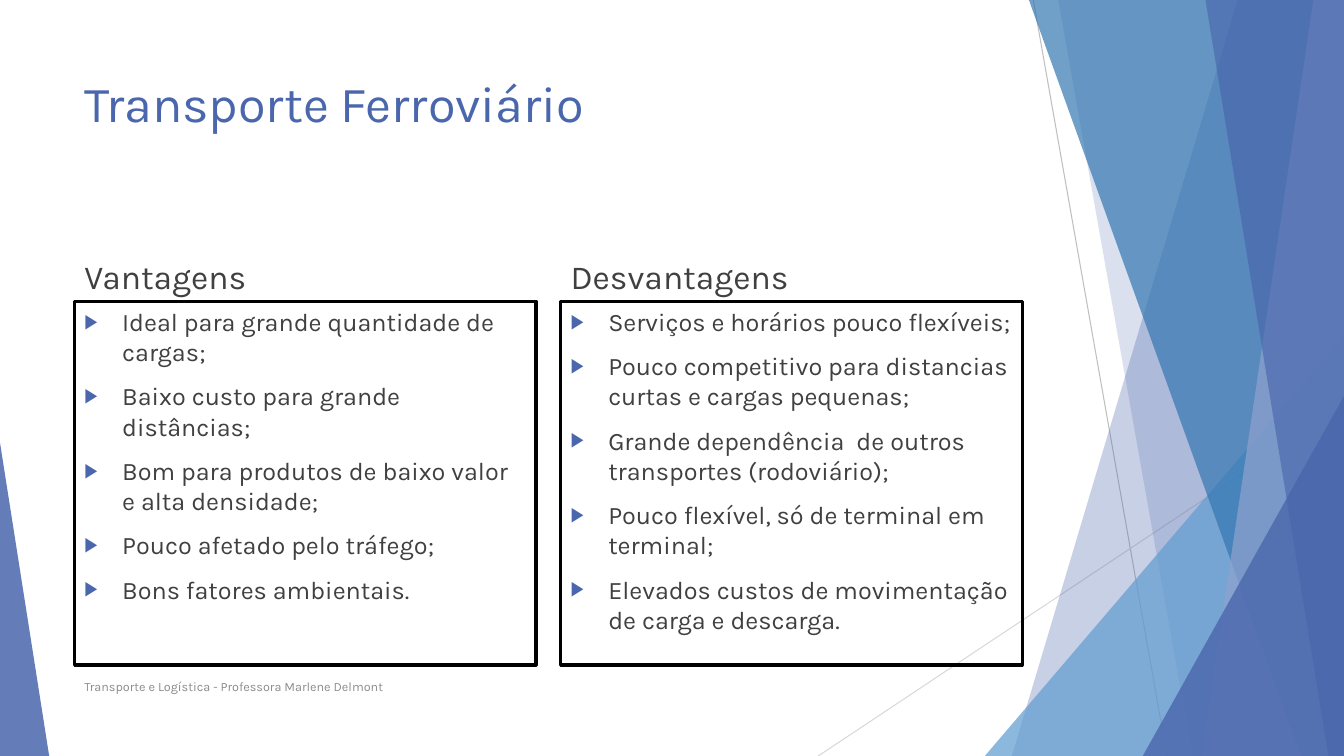
from dataclasses import dataclass

from lxml.etree import SubElement
from pptx import Presentation
from pptx.dml.color import RGBColor
from pptx.enum.shapes import MSO_CONNECTOR, MSO_SHAPE as Shape
from pptx.enum.text import MSO_ANCHOR as Anchor, MSO_AUTO_SIZE as AutoSize, PP_ALIGN as Align
from pptx.oxml.ns import qn
from pptx.util import Cm, Pt


@dataclass(frozen=True)
class Theme:
    font: str = "Karla"
    accent: str = "4A66AC"
    sky: str = "629DD1"
    steel: str = "3477B2"
    lavender: str = "90A2CF"
    text: str = "404040"
    muted: str = "8C8C8C"
    border: str = "000000"
    dark_rule: str = "BFBFBF"
    light_rule: str = "D9D9D9"
    title_size: int = 36
    heading_size: int = 24
    body_size: int = 18
    footer_size: int = 9


THEME = Theme()
SLIDE_W, SLIDE_H = 33.87, 19.05
MARGIN = 1.88
CONTENT_W = 23.88
COLUMN_W, COLUMN_GAP = 11.63, 0.62
HEADING_H, LIST_H = 1.6, 9.17
INDENT = 0.95

COLUMNS = {
    "Vantagens": [
        "Ideal para grande quantidade de cargas;",
        "Baixo custo para grande distâncias;",
        "Bom para produtos de baixo valor e alta densidade;",
        "Pouco afetado pelo tráfego;",
        "Bons fatores ambientais.",
    ],
    "Desvantagens": [
        "Serviços e horários pouco flexíveis;",
        "Pouco competitivo para distancias curtas e cargas pequenas;",
        "Grande dependência  de outros transportes (rodoviário);",
        "Pouco flexível, só de terminal em terminal;",
        "Elevados custos de movimentação de carga e descarga.",
    ],
}


def rgb(color):
    return RGBColor.from_string(color)


def paint(shape, color, opacity):
    """Fill a borderless, shadowless shape with a colour at an opacity in percent."""
    shape.shadow.inherit = False
    shape.line.fill.background()
    shape.fill.solid()
    shape.fill.fore_color.rgb = rgb(color)
    solid = shape.fill._xPr.find(qn("a:solidFill"))
    SubElement(solid[0], qn("a:alpha"), val=str(opacity * 1000))


def add_rule(slide, start, end, color):
    ends = [Cm(value) for value in (*start, *end)]
    rule = slide.shapes.add_connector(MSO_CONNECTOR.STRAIGHT, *ends)
    rule.line.color.rgb = rgb(color)
    rule.line.width = Pt(0.75)
    SubElement(rule._element.spPr, qn("a:effectLst"))


def add_band(slide, top_x, bottom_x, color, opacity):
    """Add a full-height band from a slanted left side to the slide's right edge."""
    outline = slide.shapes.build_freeform(Cm(top_x), 0)
    corners = [(SLIDE_W, 0), (SLIDE_W, SLIDE_H), (bottom_x, SLIDE_H)]
    outline.add_line_segments([(Cm(x), Cm(y)) for x, y in corners], close=True)
    paint(outline.convert_to_shape(), color, opacity)


def add_corner(slide, left, right, top, peak, color, opacity):
    """Add a triangle on the bottom edge, its peak at 0 (left) or 1 (right)."""
    corner = slide.shapes.add_shape(
        Shape.ISOSCELES_TRIANGLE, Cm(left), Cm(top), Cm(right - left), Cm(SLIDE_H - top))
    corner.adjustments[0] = peak
    paint(corner, color, opacity)


def add_decoration(slide):
    add_rule(slide, (26.04, 0), (29.41, SLIDE_H), THEME.dark_rule)
    add_rule(slide, (SLIDE_W, 10.24), (20.62, SLIDE_H), THEME.light_rule)
    add_band(slide, 31.19, 25.5, THEME.accent, 30)
    add_band(slide, 26.67, 30.05, THEME.accent, 20)
    add_corner(slide, 24.82, SLIDE_W, 8.46, 1, THEME.sky, 72)
    add_band(slide, 25.93, 32.79, THEME.steel, 70)
    add_band(slide, 33.1, 30.28, THEME.lavender, 70)
    add_band(slide, 30.38, 33.48, THEME.accent, 65)
    add_corner(slide, 28.8, SLIDE_W, 9.98, 1, THEME.accent, 80)
    add_corner(slide, 0, 1.24, 11.15, 0, THEME.accent, 85)


def write(shape, lines, size, color, anchor=Anchor.TOP, space_before=0):
    frame = shape.text_frame
    frame.text = "\n".join(lines)
    frame.word_wrap = True
    frame.auto_size = AutoSize.NONE
    frame.vertical_anchor = anchor
    for paragraph in frame.paragraphs:
        paragraph.alignment = Align.LEFT
        paragraph.space_before = Pt(space_before)
        for run in paragraph.runs:
            run.font.name = THEME.font
            run.font.size = Pt(size)
            run.font.color.rgb = rgb(color)


def add_bullet(paragraph):
    properties = paragraph._p.get_or_add_pPr()
    properties.set("marL", str(Cm(INDENT)))
    properties.set("indent", str(-Cm(INDENT)))
    bullet_color = SubElement(properties, qn("a:buClr"))
    SubElement(bullet_color, qn("a:srgbClr"), val=THEME.accent)
    SubElement(properties, qn("a:buSzPct"), val="80000")
    SubElement(properties, qn("a:buFont"), typeface="Arial")
    SubElement(properties, qn("a:buChar"), char="▶")


def set_title(slide, text, left, top, width, height):
    title = slide.shapes.title
    title.left, title.top, title.width, title.height = map(Cm, (left, top, width, height))
    write(title, [text], THEME.title_size, THEME.accent)


def add_column(slide, heading_text, items, left, top, width):
    """Place a heading and, right below it, its bordered bullet list."""
    heading = slide.shapes.add_textbox(Cm(left), Cm(top), Cm(width), Cm(HEADING_H))
    write(heading, [heading_text], THEME.heading_size, THEME.text, Anchor.BOTTOM, 10)

    points = slide.shapes.add_shape(
        Shape.RECTANGLE, Cm(left), Cm(top + HEADING_H), Cm(width), Cm(LIST_H))
    points.shadow.inherit = False
    points.fill.background()
    points.line.color.rgb = rgb(THEME.border)
    points.line.width = Pt(2.25)
    write(points, items, THEME.body_size, THEME.text, space_before=10)
    for paragraph in points.text_frame.paragraphs:
        add_bullet(paragraph)


def add_footer(slide, text, left, top, width, height):
    footer = slide.shapes.add_textbox(Cm(left), Cm(top), Cm(width), Cm(height))
    write(footer, [text], THEME.footer_size, THEME.muted, Anchor.MIDDLE)


def build_comparison_slide(deck):
    slide = deck.slides.add_slide(deck.slide_layouts.get_by_name("Title Only"))
    add_decoration(slide)
    set_title(slide, "Transporte Ferroviário", MARGIN, 1.7, CONTENT_W, 3.66)
    for index, (heading, items) in enumerate(COLUMNS.items()):
        left = MARGIN + index * (COLUMN_W + COLUMN_GAP)
        add_column(slide, heading, items, left, 5.99, COLUMN_W)
    add_footer(slide, "Transporte e Logística - Professora Marlene Delmont",
               MARGIN, 16.79, 17.5, 1.02)


def main():
    deck = Presentation()
    deck.slide_width, deck.slide_height = Cm(SLIDE_W), Cm(SLIDE_H)
    build_comparison_slide(deck)
    deck.save("out.pptx")


if __name__ == "__main__":
    main()
